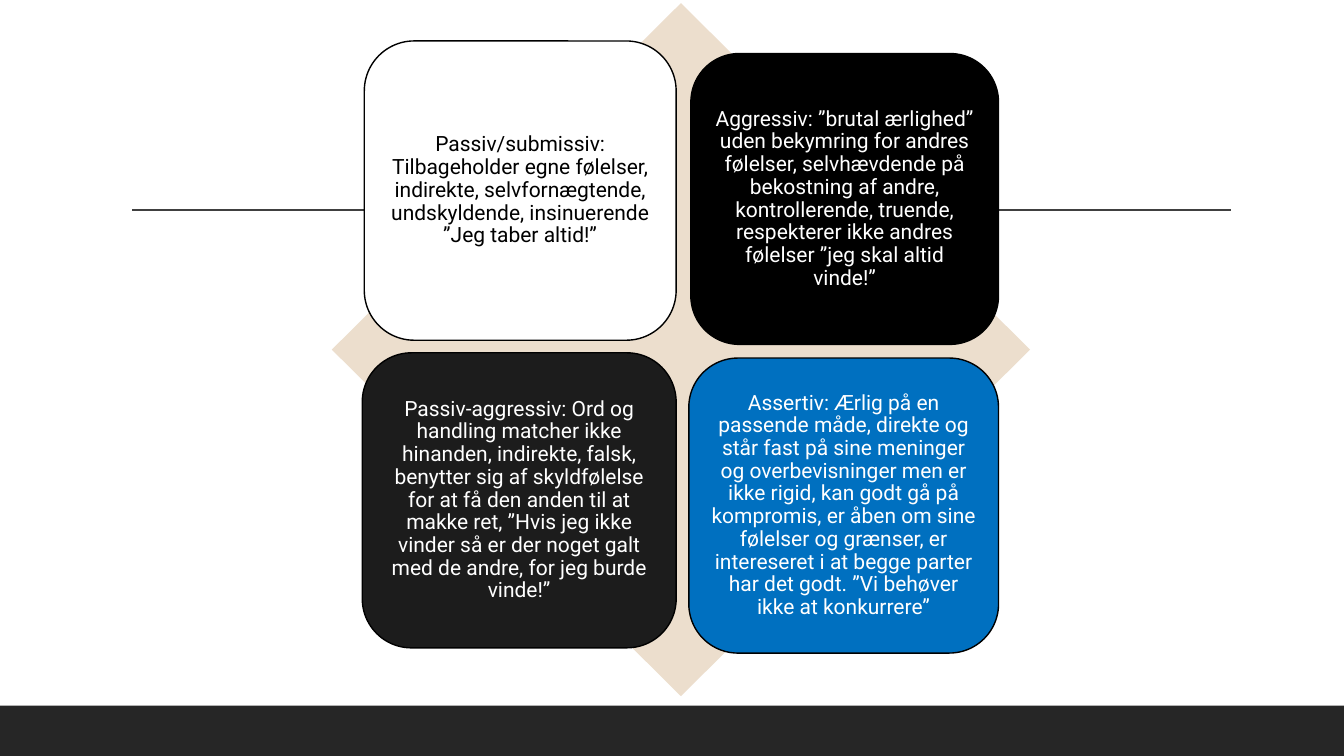
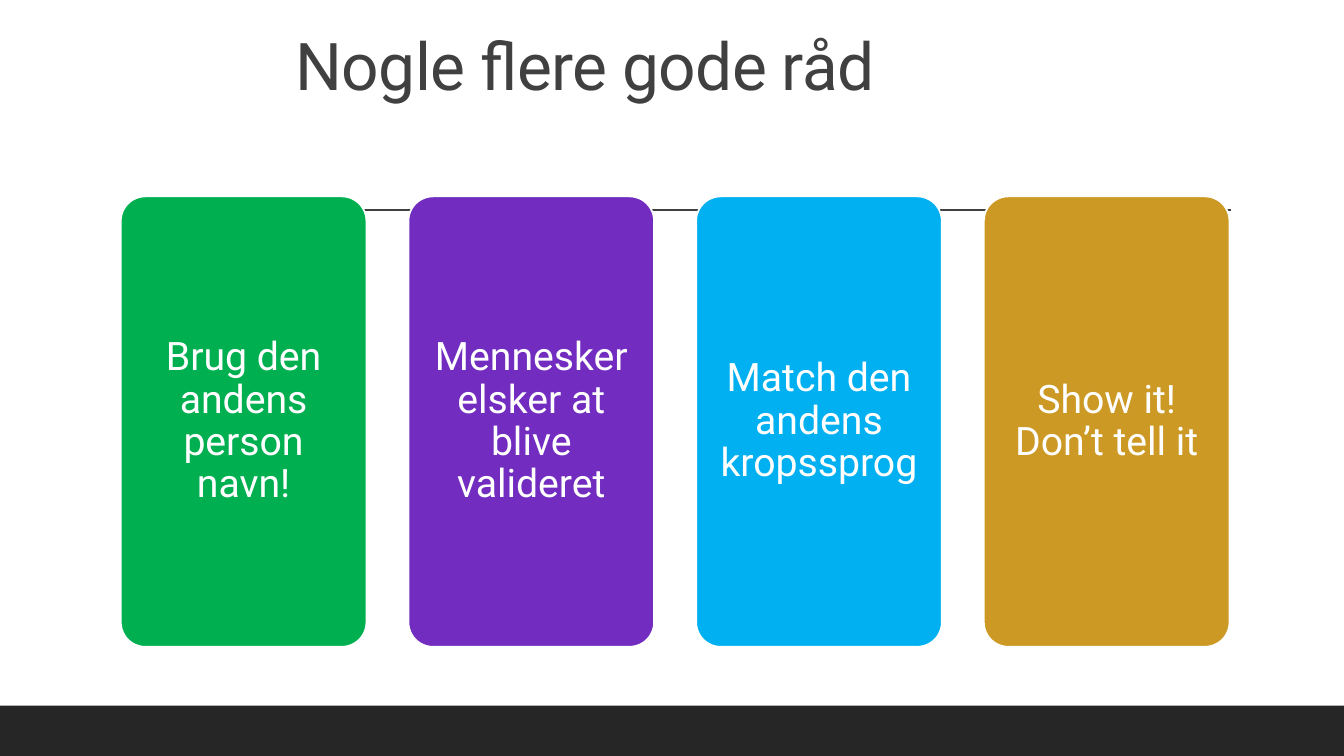
import pptx
import pptx.util
import pptx.dml.color
import pptx.enum.shapes
import pptx.enum.text
import lxml.etree

RGBColor = pptx.dml.color.RGBColor
Shape = pptx.enum.shapes.MSO_SHAPE
Anchor = pptx.enum.text.MSO_ANCHOR
Align = pptx.enum.text.PP_ALIGN

EMU_PER_PX = 9525
FONT = "Roboto"
WHITE = RGBColor(0xFF, 0xFF, 0xFF)
BLACK = RGBColor(0x00, 0x00, 0x00)
BAND = RGBColor(0x26, 0x26, 0x26)
GREY = RGBColor(0x40, 0x40, 0x40)
SAND = RGBColor(0xEC, 0xDE, 0xCD)
CHARCOAL = RGBColor(0x1C, 0x1C, 0x1C)
BLUE = RGBColor(0x00, 0x70, 0xC0)
GREEN = RGBColor(0x00, 0xB0, 0x50)
PURPLE = RGBColor(0x72, 0x2C, 0xC0)
SKY = RGBColor(0x00, 0xB0, 0xF0)
GOLD = RGBColor(0xCC, 0x99, 0x24)

STYLES = [
    ((347, 39, 297, 285), WHITE, BLACK,
     "Passiv/submissiv: Tilbageholder egne følelser, indirekte, selvfornægtende, "
     "undskyldende, insinuerende ”Jeg taber altid!”"),
    ((658, 51, 293, 277), BLACK, WHITE,
     "Aggressiv: ”brutal ærlighed” uden bekymring for andres følelser, "
     "selvhævdende på bekostning af andre, kontrollerende, truende, "
     "respekterer ikke andres følelser ”jeg skal altid vinde!”"),
    ((345, 336, 299, 281), CHARCOAL, WHITE,
     "Passiv-aggressiv: Ord og handling matcher ikke hinanden, indirekte, falsk, "
     "benytter sig af skyldfølelse for at få den anden til at makke ret, "
     "”Hvis jeg ikke vinder så er der noget galt med de andre, for jeg burde vinde!”"),
    ((656, 341, 295, 281), BLUE, WHITE,
     "Assertiv: Ærlig på en passende måde, direkte og står fast på sine meninger "
     "og overbevisninger men er ikke rigid, kan godt gå på kompromis, "
     "er åben om sine følelser og grænser, er intereseret i at begge parter "
     "har det godt. ”Vi behøver ikke at konkurrere”"),
]
TIPS = [
    (GREEN, "Brug den andens person navn!"),
    (PURPLE, "Mennesker elsker at blive valideret"),
    (SKY, "Match den andens kropssprog"),
    (GOLD, "Show it! Don’t tell it"),
]


def px(*lengths):
    return [pptx.util.Emu(length * EMU_PER_PX) for length in lengths]


def add_box(page, kind, bounds, fill, line=None, line_width=1):
    box = page.shapes.add_shape(kind, *px(*bounds))
    box.shadow.inherit = False
    box.fill.solid()
    box.fill.fore_color.rgb = fill
    if line is None:
        box.line.fill.background()
    else:
        box.line.color.rgb = line
        box.line.width = pptx.util.Pt(line_width)
    return box


def add_rule(page, left, right, top):
    rule = page.shapes.add_connector(
        pptx.enum.shapes.MSO_CONNECTOR.STRAIGHT, *px(left, top, right, top))
    rule.line.color.rgb = GREY
    rule.line.width = pptx.util.Pt(1)
    lxml.etree.SubElement(rule.element.spPr, pptx.oxml.ns.qn("a:effectLst"))
    return rule


def set_text(shape, text, size, color, align, anchor):
    frame = shape.text_frame
    frame.text = text
    frame.word_wrap = True
    frame.auto_size = pptx.enum.text.MSO_AUTO_SIZE.NONE
    frame.vertical_anchor = anchor
    para = frame.paragraphs[0]
    para.alignment = align
    para.line_spacing = 0.9
    font = para.runs[0].font
    font.name = FONT
    font.size = pptx.util.Pt(size)
    font.color.rgb = color


def set_card_text(card, text, size, color, inset):
    set_text(card, text, size, color, Align.CENTER, Anchor.MIDDLE)
    frame = card.text_frame
    frame.margin_left, frame.margin_top, frame.margin_right, frame.margin_bottom = px(*[inset] * 4)


def set_title(page, text):
    title = page.shapes.title
    title.left, title.top, title.width, title.height = px(272, -48, 1056, 153)
    set_text(title, text, 47, GREY, Align.LEFT, Anchor.BOTTOM)
    title.element.xpath(".//a:rPr")[0].set("spc", "-50")


def move_to_master(deck, shapes):
    tree = deck.slide_master.shapes.element
    for offset, shape in enumerate(shapes):
        shape.element.xpath(".//p:cNvPr")[0].set("id", str(100 + offset))
        tree.insert(2 + offset, shape.element)


def build_styles(page):
    add_box(page, Shape.DIAMOND, (316, 3, 665, 660), SAND)
    for bounds, fill, color, text in STYLES:
        card = add_box(page, Shape.ROUNDED_RECTANGLE, bounds, fill, BLACK)
        set_card_text(card, text, 15, color, 6)


def build_tips(page):
    set_title(page, "Nogle flere gode råd")
    for index, (fill, text) in enumerate(TIPS):
        bounds = (115 + index * 274, 187, 234, 429)
        card = add_box(page, Shape.ROUNDED_RECTANGLE, bounds, fill, WHITE, 1.25)
        card.adjustments[0] = 0.1
        set_card_text(card, text, 28, WHITE, 12)


def main():
    deck = pptx.Presentation()
    deck.slide_width, deck.slide_height = px(1280, 720)
    title_only, blank = deck.slide_layouts[5], deck.slide_layouts[6]
    styles_page = deck.slides.add_slide(blank)
    band = add_box(styles_page, Shape.RECTANGLE, (0, 672, 1280, 48), BAND)
    rule = add_rule(styles_page, 126, 1172, 200)
    move_to_master(deck, [band, rule])
    build_styles(styles_page)
    build_tips(deck.slides.add_slide(title_only))
    deck.save("out.pptx")


if __name__ == "__main__":
    main()
